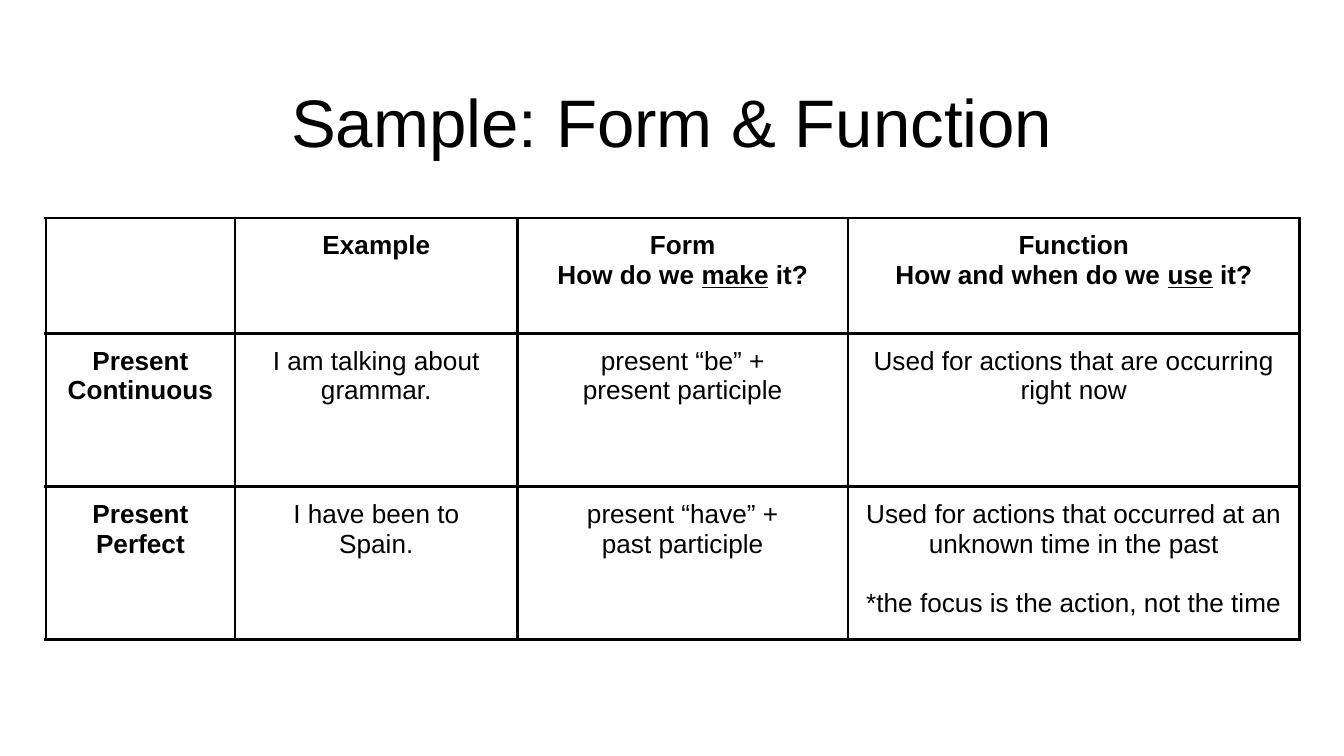
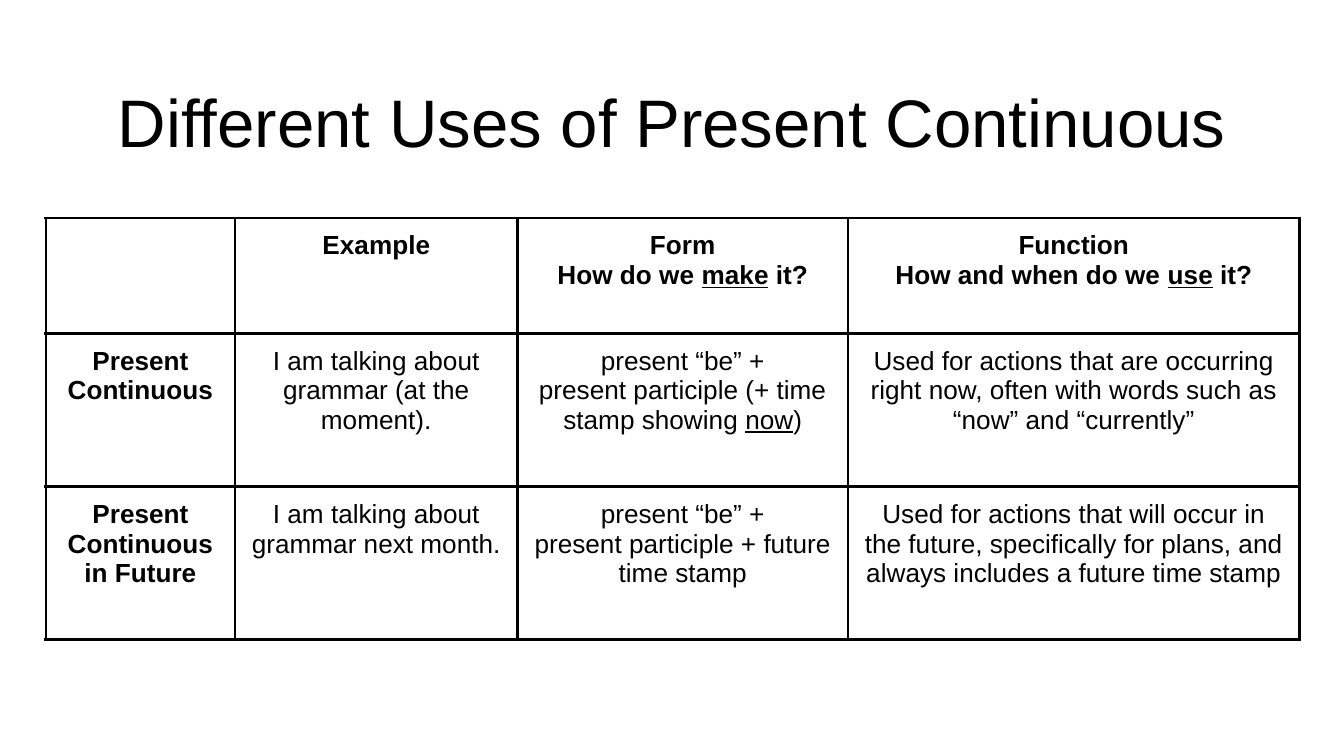
from pptx import Presentation
from pptx.dml.color import RGBColor
from pptx.enum.text import MSO_ANCHOR, PP_ALIGN
from pptx.oxml.ns import qn
from pptx.util import Inches, Pt
from lxml import etree

BOTTOM = MSO_ANCHOR.BOTTOM
CENTER = PP_ALIGN.CENTER

BLACK = RGBColor(0, 0, 0)
FONT = "Arial"
WIDE, HIGH = Inches(10), Inches(5.625)
LEFT, SPAN = 0.034, 0.932
PAD = Inches(0.1)
RULE = Pt(1.5)
GAP = Pt(16)

COLS = (1.41, 2.1, 2.46, 3.36)
ROWS = (0.86, 1.14, 1.14)

# In cell text, _word_ is underlined, a newline starts a paragraph
# and a blank line leaves a gap before the next paragraph.
HEAD = (
    "",
    "Example",
    "Form\nHow do we _make_ it?",
    "Function\nHow and when do we _use_ it?",
)
SLIDES = (
    ("Sample: Form & Function", (
        ("Present Continuous",
         "I am talking about\ngrammar.",
         "present “be” +\npresent participle",
         "Used for actions that are occurring right now"),
        ("Present Perfect",
         "I have been to\nSpain.",
         "present “have” +\npast participle",
         "Used for actions that occurred at an unknown time in the past"
         "\n\n*the focus is the action, not the time"),
    )),
    ("Different Uses of Present Continuous", (
        ("Present Continuous",
         "I am talking about\ngrammar (at the moment).",
         "present “be” +\npresent participle (+ time stamp showing _now_)",
         "Used for actions that are occurring right now, often with words "
         "such as “now” and “currently”"),
        ("Present Continuous in Future",
         "I am talking about grammar next month.",
         "present “be” +\npresent participle + future time stamp",
         "Used for actions that will occur in the future, specifically for "
         "plans, and always includes a future time stamp"),
    )),
)


def style(font, size, bold=False):
    font.name = FONT
    font.size = Pt(size)
    font.bold = bold
    font.color.rgb = BLACK


def pad(box):
    box.margin_left = box.margin_right = PAD
    box.margin_top = box.margin_bottom = PAD


def add_title(slide, text):
    box = slide.shapes.add_textbox(
        int(WIDE * LEFT), int(HIGH * 0.087), int(WIDE * SPAN), int(HIGH * 0.144))
    frame = box.text_frame
    frame.word_wrap = True
    frame.vertical_anchor = BOTTOM
    pad(frame)
    frame.text = text
    para = frame.paragraphs[0]
    para.alignment = CENTER
    style(para.runs[0].font, 36)


def add_edges(cell):
    props = cell._tc.get_or_add_tcPr()
    for side in ("lnL", "lnR", "lnT", "lnB"):
        line = etree.SubElement(props, qn("a:" + side), w=str(RULE))
        fill = etree.SubElement(line, qn("a:solidFill"))
        etree.SubElement(fill, qn("a:srgbClr"), val=str(BLACK))


def write(para, text, bold):
    """Fill a paragraph, underlining each part between underscores."""
    para.alignment = CENTER
    style(para.font, 14, bold)
    for i, part in enumerate(text.split("_")):
        if part:
            run = para.add_run()
            run.text = part
            style(run.font, 14, bold)
            run.font.underline = i % 2 == 1


def fill_cell(cell, text, bold):
    pad(cell)
    add_edges(cell)
    cell.fill.background()
    frame = cell.text_frame
    para, space = frame.paragraphs[0], False
    for i, line in enumerate(text.split("\n")):
        if i and not line:
            space = True
            continue
        if i:
            para = frame.add_paragraph()
        if space:
            para.space_before = GAP
            space = False
        write(para, line, bold)


def add_grid(slide, body):
    grid = slide.shapes.add_table(
        len(ROWS), len(COLS), int(WIDE * LEFT), int(HIGH * 0.288),
        Inches(sum(COLS)), Inches(sum(ROWS))).table
    grid.first_row = grid.horz_banding = False
    for col, width in zip(grid.columns, COLS):
        col.width = Inches(width)
    for row, height in zip(grid.rows, ROWS):
        row.height = Inches(height)
    for r, texts in enumerate((HEAD, *body)):
        for c, text in enumerate(texts):
            fill_cell(grid.cell(r, c), text, r == 0 or c == 0)


def main():
    deck = Presentation()
    deck.slide_width, deck.slide_height = WIDE, HIGH
    for title, body in SLIDES:
        slide = deck.slides.add_slide(deck.slide_layouts[6])
        add_title(slide, title)
        add_grid(slide, body)
    deck.save("out.pptx")


if __name__ == "__main__":
    main()
